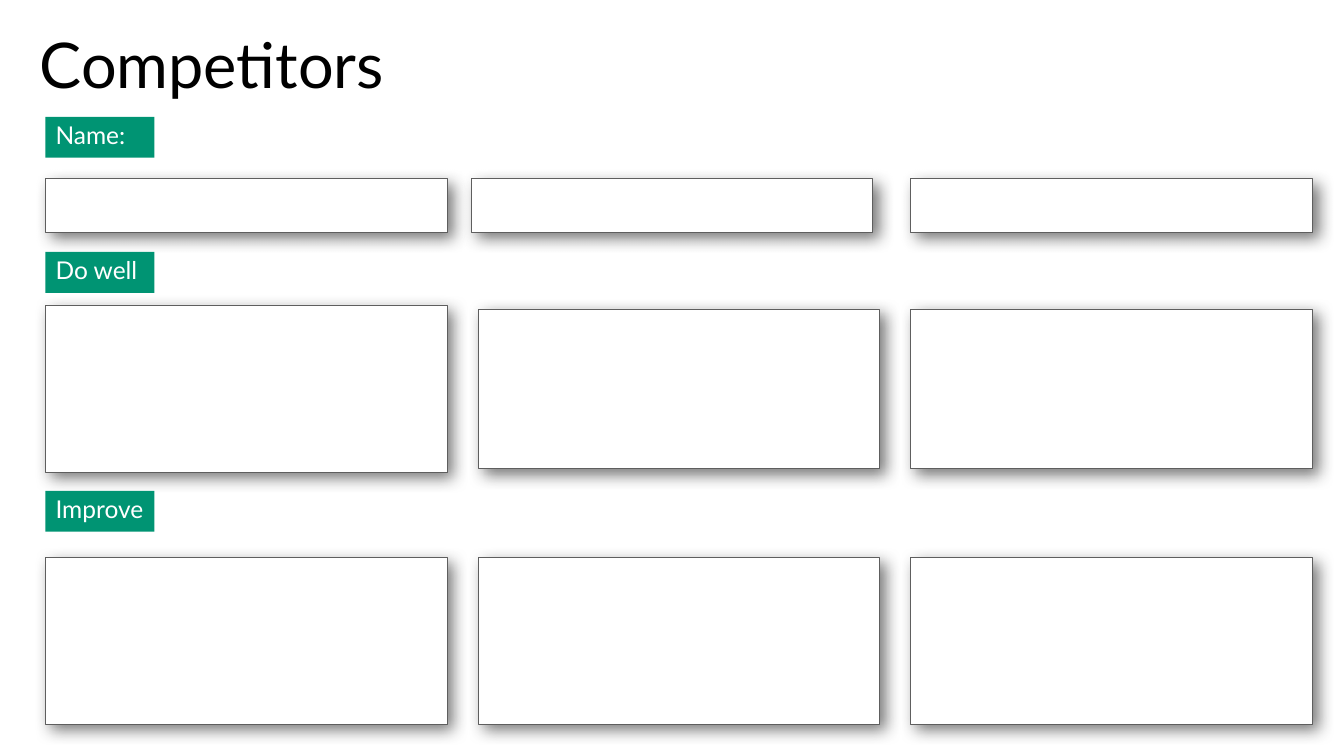
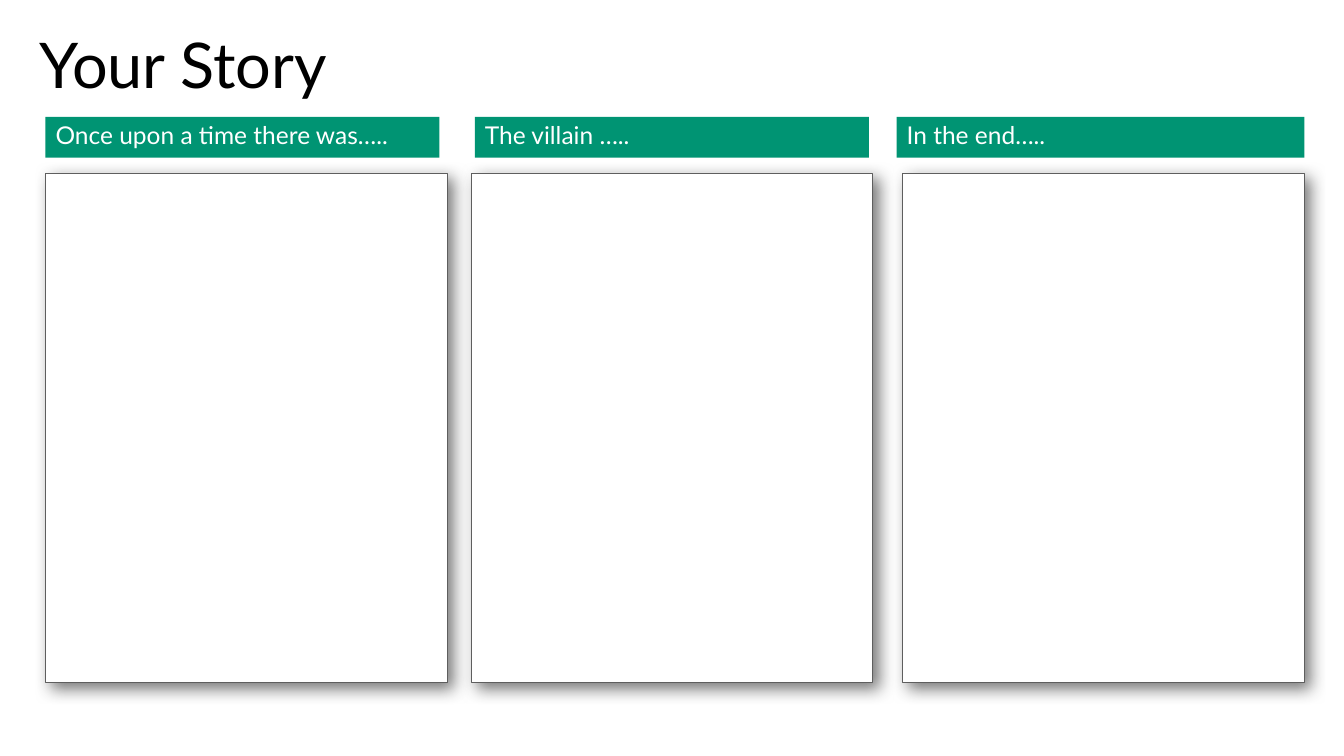
from dataclasses import dataclass

from lxml import etree
from pptx import Presentation
from pptx.dml.color import RGBColor as RGB
from pptx.enum.shapes import MSO_SHAPE as SHAPE
from pptx.enum.text import MSO_ANCHOR as ANCHOR, MSO_AUTO_SIZE as FIT, PP_ALIGN as ALIGN
from pptx.oxml.ns import qn
from pptx.util import Cm, Pt


@dataclass(frozen=True)
class Theme:
    font: str = "Lato"
    title_size: int = 90
    label_size: int = 35
    ink: str = "000000"
    paper: str = "FFFFFF"
    accent: str = "009473"
    outline: str = "5E5E5E"
    shadow: str = "333333"


LEFT = 2.29
BOX_W = 20.24
LABEL_TOP, LABEL_H = 5.89, 2.06


class Deck:
    def __init__(self, theme):
        self.theme = theme
        self.prs = Presentation()
        self.prs.slide_width, self.prs.slide_height = Cm(67.74), Cm(38.1)
        self.slide = None

    def add_slide(self, title):
        self.slide = self.prs.slides.add_slide(self.prs.slide_layouts[5])
        fill = self.slide.background.fill
        fill.solid()
        fill.fore_color.rgb = RGB.from_string(self.theme.paper)
        sp = self.slide.shapes.title
        sp.left, sp.top, sp.width, sp.height = Cm(1.75), Cm(0.86), Cm(57.86), Cm(4.62)
        self.set_text(sp, title, self.theme.title_size, self.theme.ink,
                      ANCHOR.MIDDLE, (0.25, 0.25, 0.25, 0.25))

    def set_text(self, sp, text, size, color, anchor, insets):
        """Fill a shape with one left-aligned line; insets are left, top, right, bottom."""
        tf = sp.text_frame
        tf.text = text
        tf.word_wrap = True
        tf.auto_size = FIT.NONE
        tf.vertical_anchor = anchor
        tf.margin_left, tf.margin_top, tf.margin_right, tf.margin_bottom = map(Cm, insets)
        p = tf.paragraphs[0]
        p.alignment = ALIGN.LEFT
        p.font.name = self.theme.font
        p.font.size = Pt(size)
        p.font.color.rgb = RGB.from_string(color)

    def rect(self, x, y, w, h, color):
        sp = self.slide.shapes.add_shape(SHAPE.RECTANGLE, Cm(x), Cm(y), Cm(w), Cm(h))
        sp.shadow.inherit = False
        sp.fill.solid()
        sp.fill.fore_color.rgb = RGB.from_string(color)
        sp.line.fill.background()
        return sp

    def label(self, text, x, y, w):
        sp = self.rect(x, y, w, LABEL_H, self.theme.accent)
        self.set_text(sp, text, self.theme.label_size, self.theme.paper,
                      ANCHOR.TOP, (0.51, 0.15, 0, 0.25))

    def box(self, x, y, h):
        """Add an empty outlined card with a soft shadow to the lower right."""
        sp = self.rect(x, y, BOX_W, h, self.theme.paper)
        sp.line.color.rgb = RGB.from_string(self.theme.outline)
        sp.line.width = Pt(0.75)
        effects = sp._element.spPr.find(qn("a:effectLst"))
        shadow = etree.SubElement(effects, qn("a:outerShdw"), blurRad=str(Pt(23)),
                                  dist=str(Pt(11)), dir=str(45 * 60000),
                                  algn="tl", rotWithShape="0")
        color = etree.SubElement(shadow, qn("a:srgbClr"), val=self.theme.shadow)
        etree.SubElement(color, qn("a:alpha"), val="65000")


def add_competitors(deck):
    deck.add_slide("Competitors")
    right = 45.9
    # label, label top, then (left, top, height) of each box in the row
    rows = (
        ("Name:", LABEL_TOP, [(x, 8.97, 2.72) for x in (LEFT, 23.75, right)]),
        ("Do well", 12.7, [(LEFT, 15.37, 8.41), (24.1, 15.57, 8.03), (right, 15.57, 8.03)]),
        ("Improve", 24.74, [(x, 28.09, 8.41) for x in (LEFT, 24.1, right)]),
    )
    for text, label_top, boxes in rows:
        for box in boxes:
            deck.box(*box)
        deck.label(text, LEFT, label_top, 5.49)


def add_story(deck):
    deck.add_slide("Your Story")
    # heading, heading left and width, box left
    columns = (
        ("Once upon a time there was…..", LEFT, 19.86, LEFT),
        ("The villain …..", 23.93, 19.86, 23.75),
        ("In the end…..", 45.19, 20.55, 45.49),
    )
    for text, label_x, label_w, box_x in columns:
        deck.box(box_x, 8.71, 25.7)
        deck.label(text, label_x, LABEL_TOP, label_w)


def main():
    deck = Deck(Theme())
    add_competitors(deck)
    add_story(deck)
    deck.prs.save("out.pptx")


if __name__ == "__main__":
    main()
